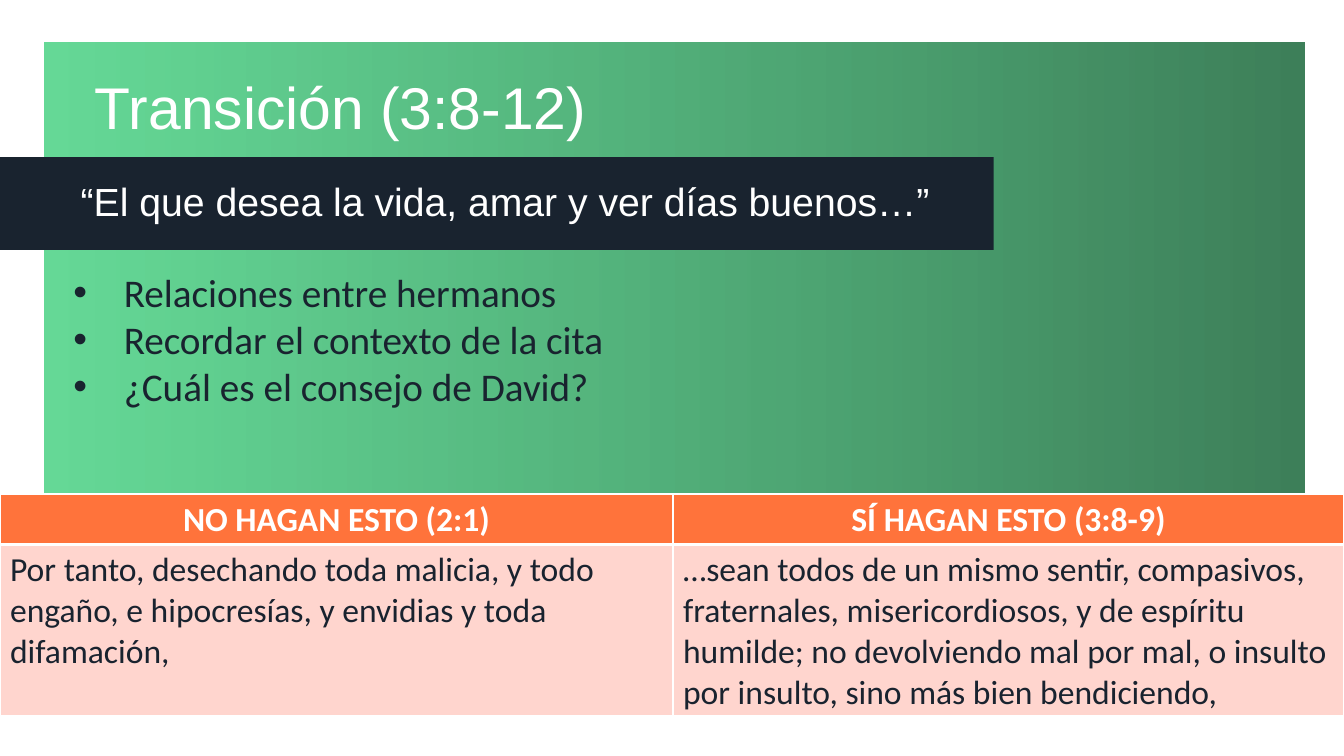
import pptx
import pptx.util
import pptx.dml.color
import pptx.enum.shapes
import pptx.enum.text
import pptx.oxml
import pptx.oxml.ns

Cm = pptx.util.Cm
Pt = pptx.util.Pt
ALIGN = pptx.enum.text.PP_ALIGN
ANCHOR = pptx.enum.text.MSO_ANCHOR

HUES = {
    "white": "FFFFFF",
    "ink": "19232F",
    "lime": "2CCB70",
    "pine": "166638",
    "orange": "FF733B",
    "blush": "FFD5CE",
}
POINTS = [
    "Relaciones entre hermanos",
    "Recordar el contexto de la cita",
    "¿Cuál es el consejo de David?",
]
ROWS = [
    ["NO HAGAN ESTO (2:1)", "SÍ HAGAN ESTO (3:8-9)"],
    [
        "Por tanto, desechando toda malicia, y todo engaño, e hipocresías, "
        "y envidias y toda difamación, ",
        "…sean todos de un mismo sentir, compasivos, fraternales, "
        "misericordiosos, y de espíritu humilde; no devolviendo mal por mal, "
        "o insulto por insulto, sino más bien bendiciendo,",
    ],
]


def color(name):
    return pptx.dml.color.RGBColor.from_string(HUES[name])


def node(tag, attrs=""):
    names = pptx.oxml.ns.nsdecls("a")
    return pptx.oxml.parse_xml(f"<a:{tag} {names} {attrs}/>")


def style(para, size, hue, face="Calibri", bold=False):
    for run in para.runs:
        font = run.font
        font.name, font.size, font.bold = face, Pt(size), bold
        font.color.rgb = color(hue)


def place(shape, box):
    shape.left, shape.top, shape.width, shape.height = map(Cm, box)


# Gradient panel behind the headings
def panel(slide, box):
    rect = slide.shapes.add_shape(
        pptx.enum.shapes.MSO_SHAPE.RECTANGLE, *map(Cm, box))
    rect.shadow.inherit = False
    rect.line.fill.background()
    rect.fill.gradient()
    rect.fill.gradient_angle = 0
    looks = [(0, "lime", 73), (1, "pine", 83)]
    for stop, (spot, hue, solid) in zip(rect.fill.gradient_stops, looks):
        stop.position = spot
        stop.color.rgb = color(hue)
    tints = rect.element.spPr.iter(pptx.oxml.ns.qn("a:srgbClr"))
    for tint, (spot, hue, solid) in zip(tints, looks):
        tint.append(node("alpha", f'val="{solid * 1000}"'))
    slide.shapes.title.element.addprevious(rect.element)


# Title and quote bar
def heading(shape, box, text, size, indent):
    place(shape, box)
    frame = shape.text_frame
    frame.text = text
    frame.word_wrap = True
    frame.auto_size = pptx.enum.text.MSO_AUTO_SIZE.NONE
    frame.vertical_anchor = ANCHOR.MIDDLE
    para = frame.paragraphs[0]
    props = para._p.get_or_add_pPr()
    props.set("marL", str(Cm(indent)))
    props.set("indent", "0")
    para.alignment = ALIGN.LEFT
    para.line_spacing = 0.9
    para.space_before = Pt(0)
    style(para, size, "white", "Arial")


# Bulleted list
def bullets(slide, box, lines):
    frame = slide.shapes.add_textbox(*map(Cm, box)).text_frame
    frame.word_wrap = True
    frame.text = "\n".join(lines)
    for para in frame.paragraphs:
        props = para._p.get_or_add_pPr()
        props.set("marL", str(Cm(1.27)))
        props.set("indent", str(Cm(-1.27)))
        props.append(node("buFont", 'typeface="Arial"'))
        props.append(node("buChar", 'char="•"'))
        style(para, 28, "ink")


def border(cell, side, width):
    props = cell._tc.get_or_add_tcPr()
    line = node("ln" + side, f'w="{Pt(width)}"')
    fill = node("solidFill")
    fill.append(node("srgbClr", f'val="{HUES["white"]}"'))
    line.append(fill)
    props.append(line)


# Comparison table
def compare(slide, box, rows, widths, heights):
    table = slide.shapes.add_table(
        len(rows), len(widths), *map(Cm, box)).table
    table.horz_banding = False
    for col, width in zip(table.columns, widths):
        col.width = Cm(width)
    for r, texts in enumerate(rows):
        table.rows[r].height = Cm(heights[r])
        head = r == 0
        for c, text in enumerate(texts):
            cell = table.cell(r, c)
            cell.text = text
            for side in "LRTB":
                thick = side == ("B" if head else "T")
                border(cell, side, 3 if thick else 1)
            cell.fill.solid()
            cell.fill.fore_color.rgb = color("orange" if head else "blush")
            para = cell.text_frame.paragraphs[0]
            para.alignment = ALIGN.CENTER if head else ALIGN.LEFT
            style(para, 24, "white" if head else "ink", bold=head)


def main():
    deck = pptx.Presentation()
    deck.slide_width, deck.slide_height = Cm(33.87), Cm(19.05)
    slide = deck.slides.add_slide(deck.slide_layouts[0])
    title, bar = slide.placeholders

    panel(slide, (1.12, 1.07, 31.75, 16.94))
    heading(title, (1.5, 1.98, 30.81, 1.63), "Transición (3:8-12)", 42, 0.64)
    heading(bar, (0, 3.96, 25.04, 2.34),
            "“El que desea la vida, amar y ver días buenos…”", 28, 1.78)
    bar.fill.solid()
    bar.fill.fore_color.rgb = color("ink")
    bullets(slide, (1.6, 6.63, 30.68, 5.05), POINTS)
    compare(slide, (0, 12.45, 33.87, 5.58), ROWS, (16.96, 16.91), (1.27, 4.31))
    deck.save("out.pptx")


if __name__ == "__main__":
    main()
